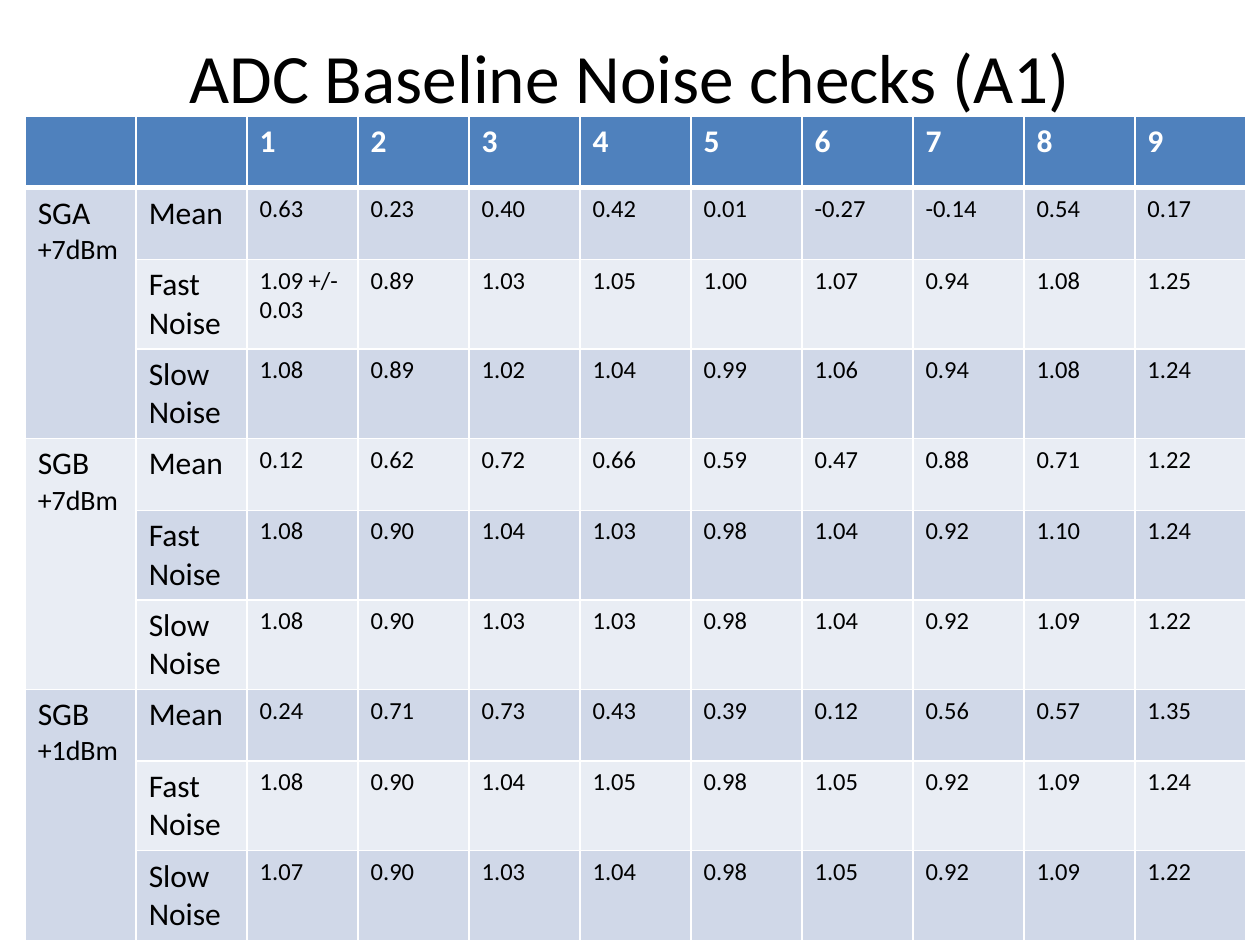
from dataclasses import dataclass

from lxml import etree
from pptx import Presentation
from pptx import util as u
from pptx.dml.color import RGBColor
from pptx.enum import text
from pptx.oxml.ns import qn


@dataclass(frozen=True)
class Theme:
    font: str = "Calibri"
    ink: str = "000000"
    white: str = "FFFFFF"
    header: str = "4F81BD"
    bands: tuple = ("E9EDF4", "D0D8E8")
    title_size: float = 39.6
    label_size: float = 18
    level_size: float = 16
    value_size: float = 14
    rule: float = 1
    header_rule: float = 3


CHANNELS = [str(number) for number in range(1, 10)]
MEASURES = ["Mean", "Fast Noise", "Slow\nNoise"]
# Each source: name, signal level, then one line of readings per measure.
SOURCES = [
    ("SGA", "+7dBm", [
        ["0.63", "0.23", "0.40", "0.42", "0.01", "-0.27", "-0.14", "0.54", "0.17"],
        ["1.09 +/- 0.03", "0.89", "1.03", "1.05", "1.00", "1.07", "0.94", "1.08", "1.25"],
        ["1.08", "0.89", "1.02", "1.04", "0.99", "1.06", "0.94", "1.08", "1.24"],
    ]),
    ("SGB", "+7dBm", [
        ["0.12", "0.62", "0.72", "0.66", "0.59", "0.47", "0.88", "0.71", "1.22"],
        ["1.08", "0.90", "1.04", "1.03", "0.98", "1.04", "0.92", "1.10", "1.24"],
        ["1.08", "0.90", "1.03", "1.03", "0.98", "1.04", "0.92", "1.09", "1.22"],
    ]),
    ("SGB", "+1dBm", [
        ["0.24", "0.71", "0.73", "0.43", "0.39", "0.12", "0.56", "0.57", "1.35"],
        ["1.08", "0.90", "1.04", "1.05", "0.98", "1.05", "0.92", "1.09", "1.24"],
        ["1.07", "0.90", "1.03", "1.04", "0.98", "1.05", "0.92", "1.09", "1.22"],
    ]),
]


def write(frame, words, *, theme, sizes, color, bold=False, align=None):
    """Write one paragraph per line; the last size serves any further lines."""
    frame.text = words
    for index, paragraph in enumerate(frame.paragraphs):
        paragraph.alignment = align
        font = paragraph.font if not paragraph.runs else paragraph.runs[0].font
        font.name = theme.font
        font.size = u.Pt(sizes[min(index, len(sizes) - 1)])
        font.bold = bold
        font.color.rgb = RGBColor.from_string(color)


def set_borders(cell, color, **widths):
    """Draw the cell's edges; widths in points are keyed L, R, T, B in that order."""
    properties = cell._tc.get_or_add_tcPr()
    for position, (side, width) in enumerate(widths.items()):
        line = etree.Element(qn(f"a:ln{side}"), w=str(u.Pt(width)))
        fill = etree.SubElement(line, qn("a:solidFill"))
        etree.SubElement(fill, qn("a:srgbClr"), val=color)
        properties.insert(position, line)


class NoiseSlide:
    def __init__(self, presentation, theme):
        self.theme = theme
        self.slide = presentation.slides.add_slide(presentation.slide_layouts[5])

    def title(self, words):
        heading = self.slide.shapes.title
        heading.left, heading.top = u.Inches(0.5), u.Inches(0.3)
        heading.width, heading.height = u.Inches(9), u.Inches(0.61)
        frame = heading.text_frame
        frame.vertical_anchor = text.MSO_ANCHOR.MIDDLE
        frame.auto_size = text.MSO_AUTO_SIZE.NONE
        write(frame, words, theme=self.theme, sizes=[self.theme.title_size],
              color=self.theme.ink, align=text.PP_ALIGN.CENTER)

    def cell(self, grid, row, column, words, *sizes):
        theme, cell = self.theme, grid.cell(row, column)
        is_header = row == 0
        write(cell.text_frame, words, theme=theme, sizes=sizes, bold=is_header,
              color=theme.white if is_header else theme.ink)
        cell.fill.solid()
        cell.fill.fore_color.rgb = RGBColor.from_string(
            theme.header if is_header else theme.bands[row % 2])
        set_borders(cell, theme.white, L=theme.rule, R=theme.rule,
                    T=theme.header_rule if row == 1 else theme.rule,
                    B=theme.header_rule if is_header else theme.rule)

    def noise_table(self, sources):
        theme = self.theme
        row_count = 1 + len(sources) * len(MEASURES)
        column_count = 2 + len(CHANNELS)
        row_height = u.Inches(0.57)
        grid = self.slide.shapes.add_table(
            row_count, column_count, u.Inches(0.2), u.Inches(0.92),
            u.Inches(9.69), row_height * row_count).table
        for column, label in enumerate(["", ""] + CHANNELS):
            self.cell(grid, 0, column, label, theme.label_size)

        for group, (source, level, readings) in enumerate(sources):
            first = 1 + group * len(MEASURES)
            last = first + len(MEASURES) - 1
            for row, (measure, values) in enumerate(zip(MEASURES, readings), first):
                label = f"{source}\n{level}" if row == first else ""
                self.cell(grid, row, 0, label, theme.label_size, theme.level_size)
                self.cell(grid, row, 1, measure, theme.label_size)
                for column, value in enumerate(values, 2):
                    self.cell(grid, row, column, value, theme.value_size)
            grid.cell(first, 0).merge(grid.cell(last, 0))


def main():
    presentation = Presentation()
    presentation.slide_width, presentation.slide_height = u.Inches(10), u.Inches(7.5)
    noise = NoiseSlide(presentation, Theme())
    noise.title("ADC Baseline Noise checks (A1)")
    noise.noise_table(SOURCES)
    presentation.save("out.pptx")


if __name__ == "__main__":
    main()
